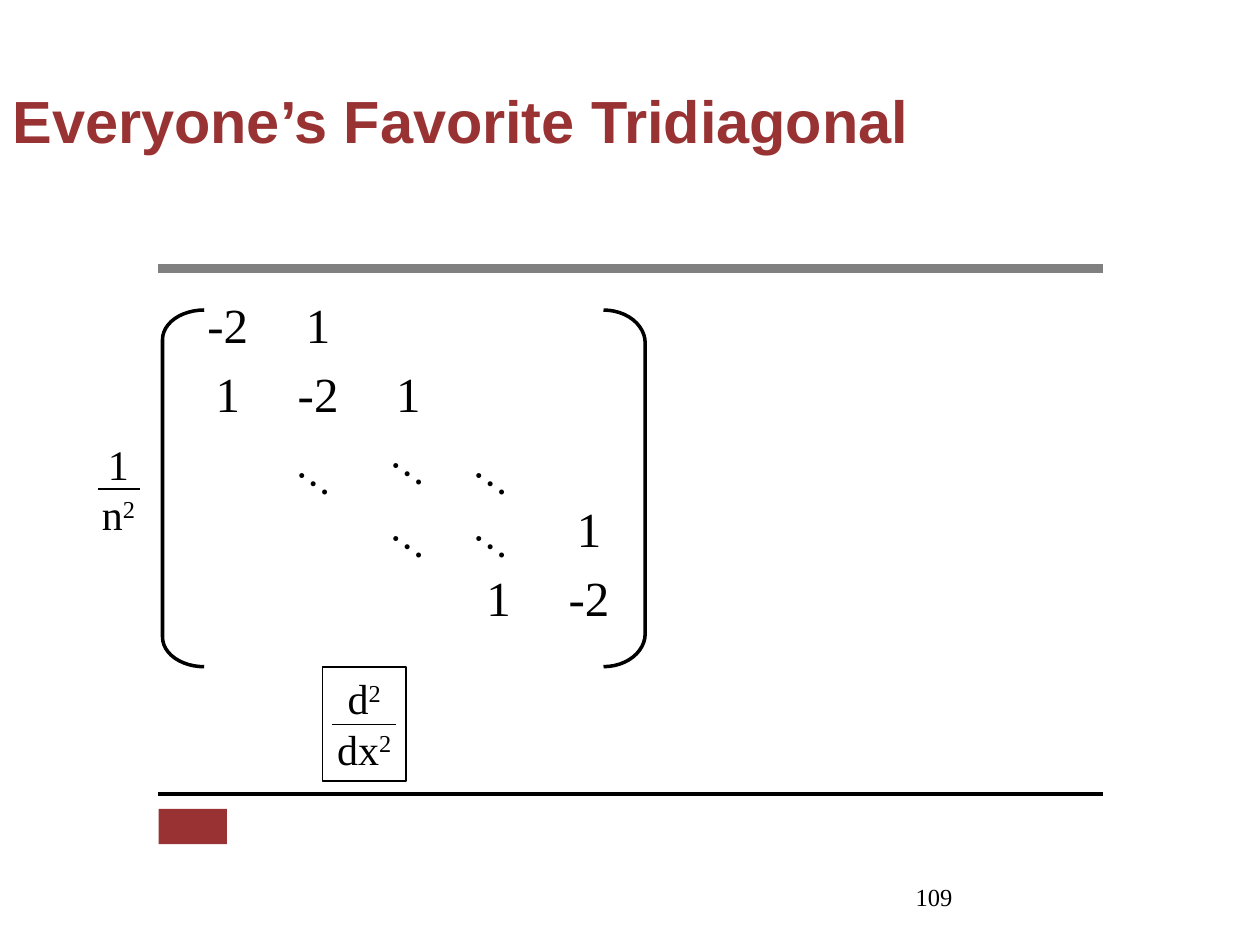
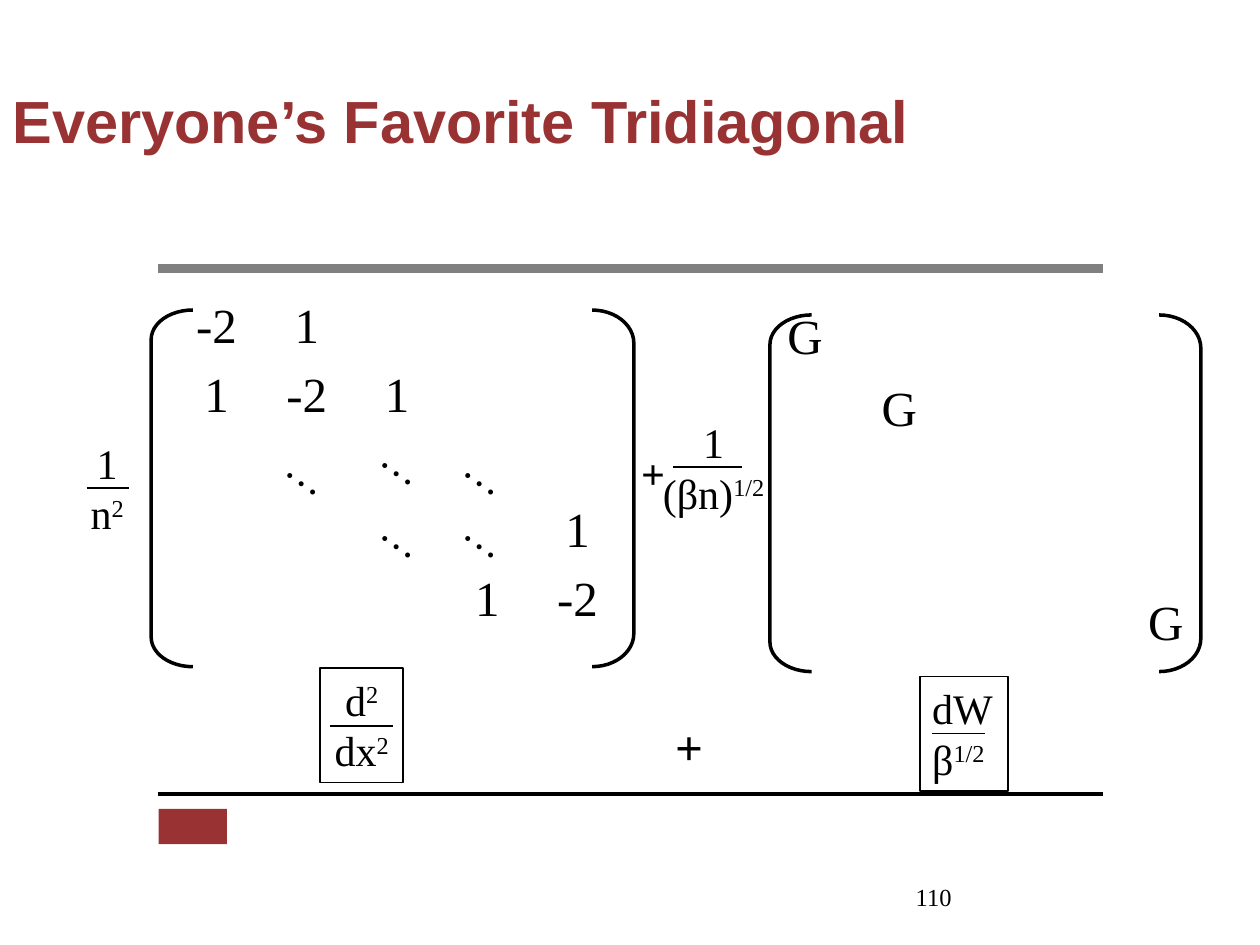
from lxml import etree
from pptx import Presentation
from pptx.dml.color import RGBColor
from pptx.enum.shapes import MSO_CONNECTOR, MSO_SHAPE
from pptx.enum.text import MSO_ANCHOR, MSO_AUTO_SIZE, PP_ALIGN
from pptx.oxml.ns import qn
from pptx.util import Pt

RED, GREY, BLACK = "993333", "808080", "000000"
SERIF, SANS = "Times New Roman", "Arial"
NO_GRID_STYLE = "{2D5ABB26-0587-4C30-8999-92F81FD0307C}"

TRIDIAGONAL = {(0, 0): "-2", (0, 1): "1", (1, 0): "1", (1, 1): "-2", (1, 2): "1",
               (3, 4): "1", (4, 3): "1", (4, 4): "-2"}
NOISE_DIAGONAL = {(0, 0): "G", (1, 1): "G", (4, 4): "G"}
DOTS = [(114.5, 78.5), (162, 84.2), (114.5, 120.2), (60.5, 84.2), (162, 120.2)]


def color(hex_code):
    return RGBColor.from_string(hex_code)


def points(*values):
    return [Pt(value) for value in values]


def style(font, size, name=SERIF, hex_code=BLACK, bold=False):
    font.size, font.name, font.bold = Pt(size), name, bold
    font.color.rgb = color(hex_code)


def add_line(page, start, end, width=1, hex_code=BLACK):
    line = page.shapes.add_connector(MSO_CONNECTOR.STRAIGHT, *points(*start, *end))
    line.line.width = Pt(width)
    line.line.color.rgb = color(hex_code)
    etree.SubElement(line._element.spPr, qn("a:effectLst"))


def add_outline(page, kind, box, width):
    shape = page.shapes.add_shape(kind, *points(*box))
    shape.shadow.inherit = False
    shape.fill.background()
    shape.line.width = Pt(width)
    shape.line.color.rgb = color(BLACK)
    return shape


def write(shape, lines, size=24, bold=False, align=PP_ALIGN.LEFT):
    """Fill a shape with lines; what follows ^ is raised."""
    frame = shape.text_frame
    frame.word_wrap = False
    frame.auto_size = MSO_AUTO_SIZE.SHAPE_TO_FIT_TEXT
    frame.vertical_anchor = MSO_ANCHOR.TOP
    for index, text in enumerate(lines):
        para = frame.paragraphs[0] if index == 0 else frame.add_paragraph()
        para.alignment = align
        for level, part in enumerate(text.split("^")):
            span = para.add_run()
            span.text = part
            style(span.font, size, bold=bold)
            if level:
                span.font._element.set("baseline", "30000")


def add_text(page, box, lines, **options):
    shape = page.shapes.add_textbox(*points(*box))
    write(shape, lines, **options)
    return shape


# Title, rules and footer
def add_frame(deck, title, number):
    page = deck.slides.add_slide(deck.slide_layouts[5])
    add_line(page, (90, 453.6), (630, 453.6), 2)
    add_line(page, (90, 153.4), (630, 153.4), 5, GREY)

    emblem = page.shapes.add_shape(MSO_SHAPE.RECTANGLE, *points(90.7, 462.2, 39, 20.2))
    emblem.shadow.inherit = False
    emblem.fill.solid()
    emblem.fill.fore_color.rgb = color(RED)
    emblem.line.fill.background()

    add_text(page, (516.2, 500.4, 167.8, 28.8), [number], size=14)

    heading = page.shapes.title
    heading.left, heading.top, heading.width, heading.height = points(0, 23.8, 720, 90)
    frame = heading.text_frame
    frame.text = title
    frame.auto_size = MSO_AUTO_SIZE.NONE
    frame.vertical_anchor = MSO_ANCHOR.MIDDLE
    para = frame.paragraphs[0]
    para.alignment = PP_ALIGN.LEFT
    para.line_spacing = Pt(40)
    style(para.runs[0].font, 34, SANS, RED, True)
    return page


# Bracketed matrix, with its brackets and dots set from its top left corner
def add_matrix(page, left, top, entries, widths, row_height, brackets, dots=()):
    table_frame = page.shapes.add_table(
        5, 5, *points(left, top, sum(widths), 5 * row_height))
    table = table_frame.table
    table.first_row = table.horz_banding = False
    table._tbl.tblPr.find(qn("a:tableStyleId")).text = NO_GRID_STYLE
    for column, width in zip(table.columns, widths):
        column.width = Pt(width)
    for row in table.rows:
        row.height = Pt(row_height)
    for cell in table.iter_cells():
        cell.fill.background()
        cell.margin_top, cell.margin_bottom = points(3.6, 2)
    for position, text in entries.items():
        para = table.cell(*position).text_frame.paragraphs[0]
        para.text = text
        para.alignment = PP_ALIGN.CENTER
        style(para.runs[0].font, 28)

    for x, y in dots:
        box = (left + x, top + y, 38.2, 36)
        add_text(page, box, ["…"]).rotation = 35.9

    bracket_left, bracket_right, bracket_top = brackets
    for kind, x, curve in ((MSO_SHAPE.LEFT_BRACKET, bracket_left, 0.708),
                           (MSO_SHAPE.RIGHT_BRACKET, bracket_right, 0.792)):
        box = (left + x, top + bracket_top, 23.8, 203.8)
        add_outline(page, kind, box, 2).adjustments[0] = curve


def add_tridiagonal(page, left):
    add_matrix(page, left, 167.8, TRIDIAGONAL, [51.6] * 5, 38,
               (-11.5, 240.5, 9.4), DOTS)


# Fraction: two lines and a bar (x from, x to, y) set from the box's corner
def add_fraction(page, box, lines, bar, boxed=False, align=PP_ALIGN.CENTER):
    if boxed:
        write(add_outline(page, MSO_SHAPE.RECTANGLE, box, 1), lines, align=align)
    else:
        add_text(page, box, lines, align=align)
    left, top = box[:2]
    start, end, y = bar
    add_line(page, (left + start, top + y), (left + end, top + y))


def add_scale(page, left, top):
    add_fraction(page, (left, top, 34.6, 64.8), ["1", "n^2"], (5.6, 29.8, 32.4))


def add_derivative(page, left, top):
    add_fraction(page, (left, top, 47.6, 65.5), ["d^2", "dx^2"], (5.6, 41.8, 33), True)


def build_derivative_slide(deck, title):
    page = add_frame(deck, title, "109")
    add_tridiagonal(page, 104.4)
    add_scale(page, 50.4, 247)
    add_derivative(page, 184.3, 381)


def build_noise_slide(deck, title):
    page = add_frame(deck, title, "110")
    add_tridiagonal(page, 97.9)
    add_scale(page, 43.9, 246.4)
    add_derivative(page, 182.9, 381.7)

    # Random diagonal term
    add_fraction(page, (370, 234.7, 75.6, 64.8), ["1", "(βn)^1/2"], (14.8, 54.2, 32))
    add_text(page, (359.3, 252, 28, 36), ["+"], bold=True)
    add_matrix(page, 434.2, 174.2, NOISE_DIAGONAL, [51.6, 56.2, 46.8, 51.6, 51.6],
               40.8, (5.8, 228.2, 5.8))
    add_fraction(page, (525.6, 386.6, 50.4, 65.5), ["dW", "β^1/2"], (6.8, 37, 32.6),
                 True, PP_ALIGN.LEFT)
    add_text(page, (378.7, 406, 30.2, 41), ["+"], size=28, bold=True)


def main():
    deck = Presentation()
    deck.slide_width, deck.slide_height = points(720, 540)
    title = "Everyone’s Favorite Tridiagonal"
    build_derivative_slide(deck, title)
    build_noise_slide(deck, title)
    deck.save("out.pptx")


if __name__ == "__main__":
    main()
